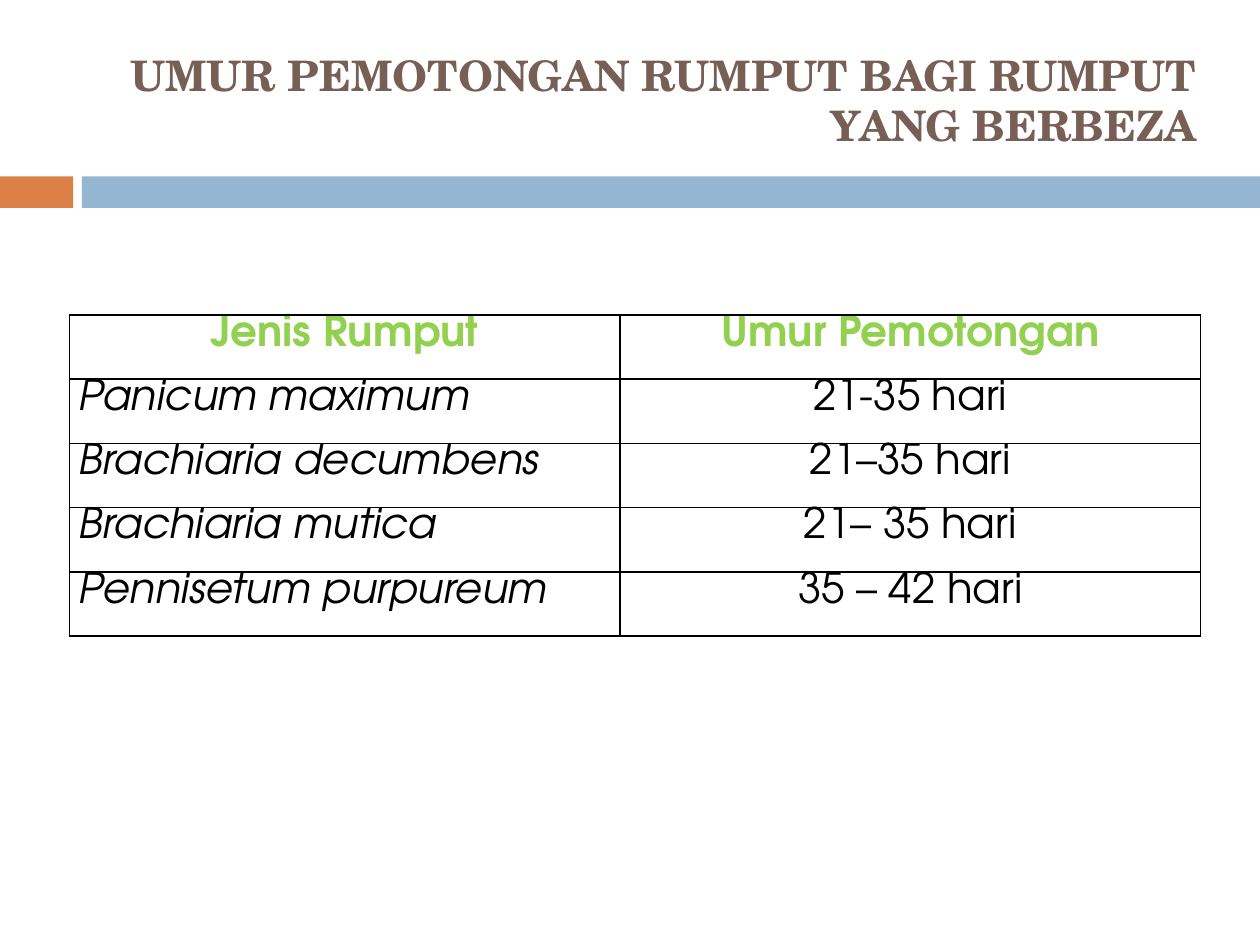
from lxml.etree import SubElement
from pptx import Presentation
from pptx.dml.color import RGBColor
from pptx.enum.shapes import MSO_SHAPE
from pptx.enum.text import MSO_ANCHOR, PP_ALIGN
from pptx.oxml.ns import qn
from pptx.util import Inches, Pt

ORANGE = RGBColor(0xDD, 0x80, 0x47)
BLUE = RGBColor(0x94, 0xB6, 0xD2)
BROWN = RGBColor(0x77, 0x5F, 0x55)
GREEN = RGBColor(0x92, 0xD0, 0x50)
BLACK = RGBColor(0, 0, 0)

TITLE_FONT = "TeX Gyre Schola"
TABLE_FONT = "TeX Gyre Adventor"

ROWS = [
    ("Jenis Rumput", "Umur Pemotongan"),
    ("Panicum maximum", "21-35 hari"),
    ("Brachiaria decumbens", "21–35 hari"),
    ("Brachiaria mutica", "21– 35 hari"),
    ("Pennisetum purpureum", "35 – 42 hari"),
]
COL_WIDTHS = (4.37, 4.61)
ROW_HEIGHT = 0.51


def add_bar(s, left, width, color):
    bar = s.shapes.add_shape(MSO_SHAPE.RECTANGLE, Inches(left), Inches(1.4),
                             Inches(width), Inches(0.25))
    bar.shadow.inherit = False
    bar.fill.solid()
    bar.fill.fore_color.rgb = color
    bar.line.fill.background()


def style_paragraph(p, font, color, align, bold=False, italic=False):
    p.alignment = align
    p.font.name = font
    p.font.size = Pt(24)
    p.font.bold = bold
    p.font.italic = italic
    p.font.color.rgb = color


def add_title(s, text):
    tf = s.shapes.add_textbox(Inches(0.67), Inches(0.25),
                              Inches(8.92), Inches(1.08)).text_frame
    tf.word_wrap = True
    tf.vertical_anchor = MSO_ANCHOR.MIDDLE
    tf.text = text
    style_paragraph(tf.paragraphs[0], TITLE_FONT, BROWN, PP_ALIGN.RIGHT, bold=True)


def add_borders(cell):
    tc_pr = cell._tc.get_or_add_tcPr()
    for i, side in enumerate(("a:lnL", "a:lnR", "a:lnT", "a:lnB")):
        ln = SubElement(tc_pr, qn(side), w=str(Pt(1)))
        fill = SubElement(ln, qn("a:solidFill"))
        SubElement(fill, qn("a:srgbClr"), val=str(BLACK))
        # Borders come before the cell fill
        tc_pr.insert(i, ln)


def fill_cell(cell, text, row, col):
    cell.margin_left = cell.margin_right = Inches(0.07)
    cell.margin_top = cell.margin_bottom = 0
    cell.fill.background()
    add_borders(cell)
    cell.text = text
    header, species = row == 0, row > 0 and col == 0
    style_paragraph(cell.text_frame.paragraphs[0], TABLE_FONT,
                    GREEN if header else BLACK,
                    PP_ALIGN.LEFT if species else PP_ALIGN.CENTER,
                    bold=header, italic=species)


def add_grass_table(s):
    table = s.shapes.add_table(len(ROWS), len(COL_WIDTHS), Inches(0.55), Inches(2.5),
                               Inches(sum(COL_WIDTHS)),
                               Inches(ROW_HEIGHT * len(ROWS))).table
    for column, width in zip(table.columns, COL_WIDTHS):
        column.width = Inches(width)
    for r, row in enumerate(ROWS):
        table.rows[r].height = Inches(ROW_HEIGHT)
        for c, text in enumerate(row):
            fill_cell(table.cell(r, c), text, r, c)


def main():
    prs = Presentation()
    prs.slide_width, prs.slide_height = Inches(10), Inches(7.5)
    s = prs.slides.add_slide(prs.slide_layouts[6])

    # Bars under the title
    add_bar(s, 0, 0.58, ORANGE)
    add_bar(s, 0.65, 9.35, BLUE)

    # Title and table
    add_title(s, "UMUR PEMOTONGAN RUMPUT BAGI RUMPUT YANG BERBEZA")
    add_grass_table(s)
    prs.save("out.pptx")


if __name__ == "__main__":
    main()
